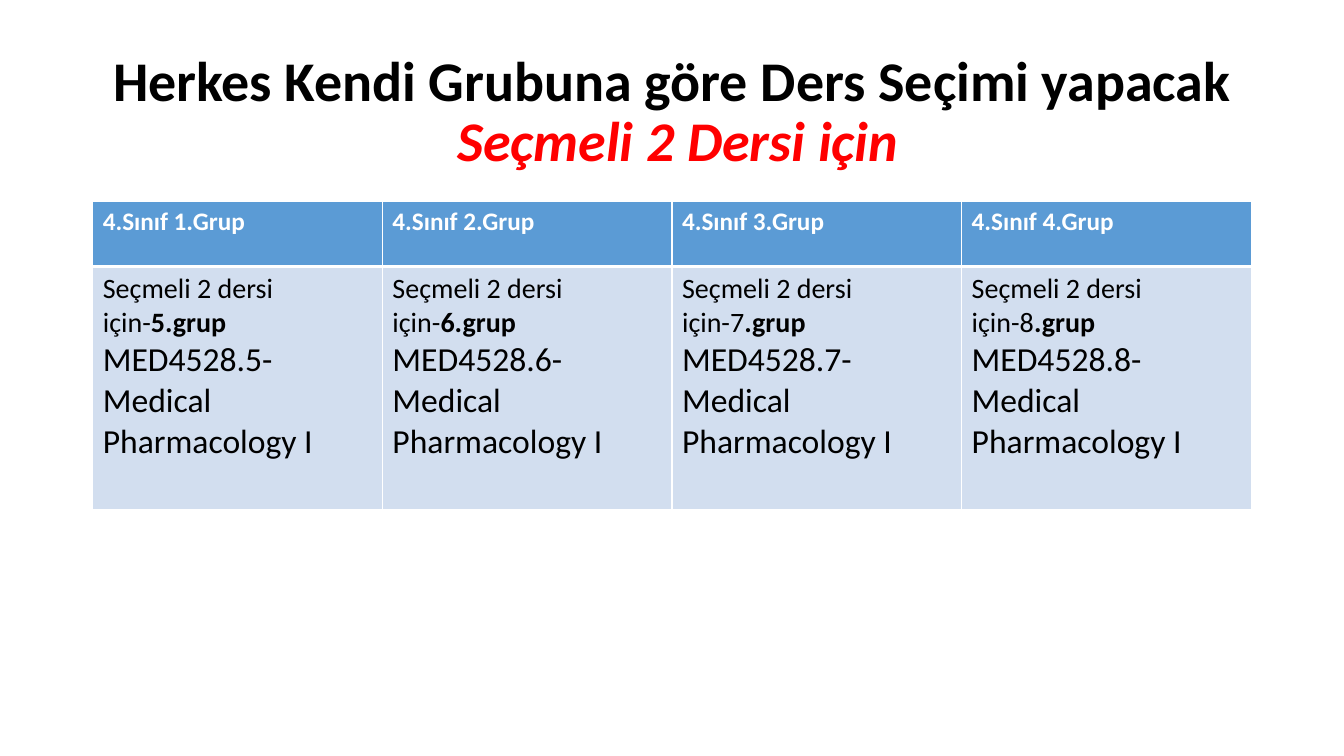
import copy

import pptx
import pptx.dml.color
import pptx.enum.text
import pptx.oxml
import pptx.oxml.ns
import pptx.util

RGBColor = pptx.dml.color.RGBColor
BLACK = RGBColor(0x00, 0x00, 0x00)
WHITE = RGBColor(0xFF, 0xFF, 0xFF)
RED = RGBColor(0xFF, 0x00, 0x00)
HEADER_BLUE = RGBColor(0x5B, 0x9B, 0xD5)
BODY_BLUE = RGBColor(0xD2, 0xDE, 0xEF)

WIDTH = pptx.util.Inches(13.33)
HEIGHT = pptx.util.Inches(7.5)
MARGIN = pptx.util.Inches(0.92)
CONTENT_WIDTH = WIDTH - 2 * MARGIN
HEADER_SHARE = 0.21

GROUPS = [
    ("4.Sınıf 1.Grup", "", "5.grup", "MED4528.5-Medical Pharmacology I"),
    ("4.Sınıf 2.Grup", "", "6.grup", "MED4528.6-Medical Pharmacology I"),
    ("4.Sınıf 3.Grup", "7", ".grup", "MED4528.7-Medical Pharmacology I"),
    ("4.Sınıf 4.Grup", "8", ".grup", "MED4528.8-Medical Pharmacology I"),
]


def format_span(span, size, color, bold=False, italic=False):
    span.font.name = "Calibri"
    span.font.size = pptx.util.Pt(size)
    span.font.color.rgb = color
    span.font.bold = bold
    span.font.italic = italic


def add_span(para, text, size, color, bold=False, italic=False):
    span = para.add_run()
    span.text = text
    format_span(span, size, color, bold, italic)


def set_borders(cell, bottom_width):
    properties = cell._tc.get_or_add_tcPr()
    for index, side in enumerate(("lnL", "lnR", "lnT", "lnB")):
        width = pptx.util.Pt(bottom_width if side == "lnB" else 1)
        line = pptx.oxml.parse_xml(
            f'<a:{side} {pptx.oxml.ns.nsdecls("a")} w="{width}"><a:solidFill>'
            f'<a:srgbClr val="{WHITE}"/></a:solidFill></a:{side}>'
        )
        properties.insert(index, line)


def style_cell(cell, color, bottom_width):
    cell.fill.solid()
    cell.fill.fore_color.rgb = color
    set_borders(cell, bottom_width)


def place_title(title, left, top, width, height):
    title.left, title.top, title.width, title.height = left, top, width, height
    frame = title.text_frame
    frame.word_wrap = True
    frame.auto_size = pptx.enum.text.MSO_AUTO_SIZE.NONE
    frame.vertical_anchor = pptx.enum.text.MSO_ANCHOR.MIDDLE
    para = frame.paragraphs[0]
    para.text = "Herkes Kendi Grubuna göre Ders Seçimi yapacak\v "
    para.alignment = pptx.enum.text.PP_ALIGN.CENTER
    para.line_spacing = 0.9
    heading, gap = para.runs
    format_span(heading, 40, BLACK, bold=True)
    format_span(gap, 36, BLACK, bold=True)
    line_break = para._p.find(pptx.oxml.ns.qn("a:br"))
    line_break.append(copy.deepcopy(heading.font._element))
    add_span(para, "Seçmeli 2 Dersi için", 40, RED, bold=True, italic=True)


def add_group_table(page, left, top, width, height):
    frame = page.shapes.add_table(2, len(GROUPS), left, top, width, height)
    table = frame.table
    table.rows[0].height = int(height * HEADER_SHARE)
    table.rows[1].height = height - table.rows[0].height
    for column, (heading, number, group, course) in enumerate(GROUPS):
        table.columns[column].width = width // len(GROUPS)
        header, body = table.cell(0, column), table.cell(1, column)
        style_cell(header, HEADER_BLUE, 3)
        style_cell(body, BODY_BLUE, 1)
        add_span(header.text_frame.paragraphs[0], heading, 18, WHITE, bold=True)
        para = body.text_frame.paragraphs[0]
        add_span(para, f"Seçmeli 2 dersi için-{number}", 20, BLACK)
        add_span(para, group, 20, BLACK, bold=True)
        add_span(body.text_frame.add_paragraph(), course, 24, BLACK)


def main():
    deck = pptx.Presentation()
    deck.slide_width, deck.slide_height = WIDTH, HEIGHT
    page = deck.slides.add_slide(deck.slide_layouts[5])
    place_title(page.shapes.title, MARGIN, pptx.util.Inches(0.4),
                CONTENT_WIDTH, pptx.util.Inches(1.45))
    add_group_table(page, MARGIN, pptx.util.Inches(2),
                    CONTENT_WIDTH, pptx.util.Inches(3.06))
    deck.save("out.pptx")


if __name__ == "__main__":
    main()
